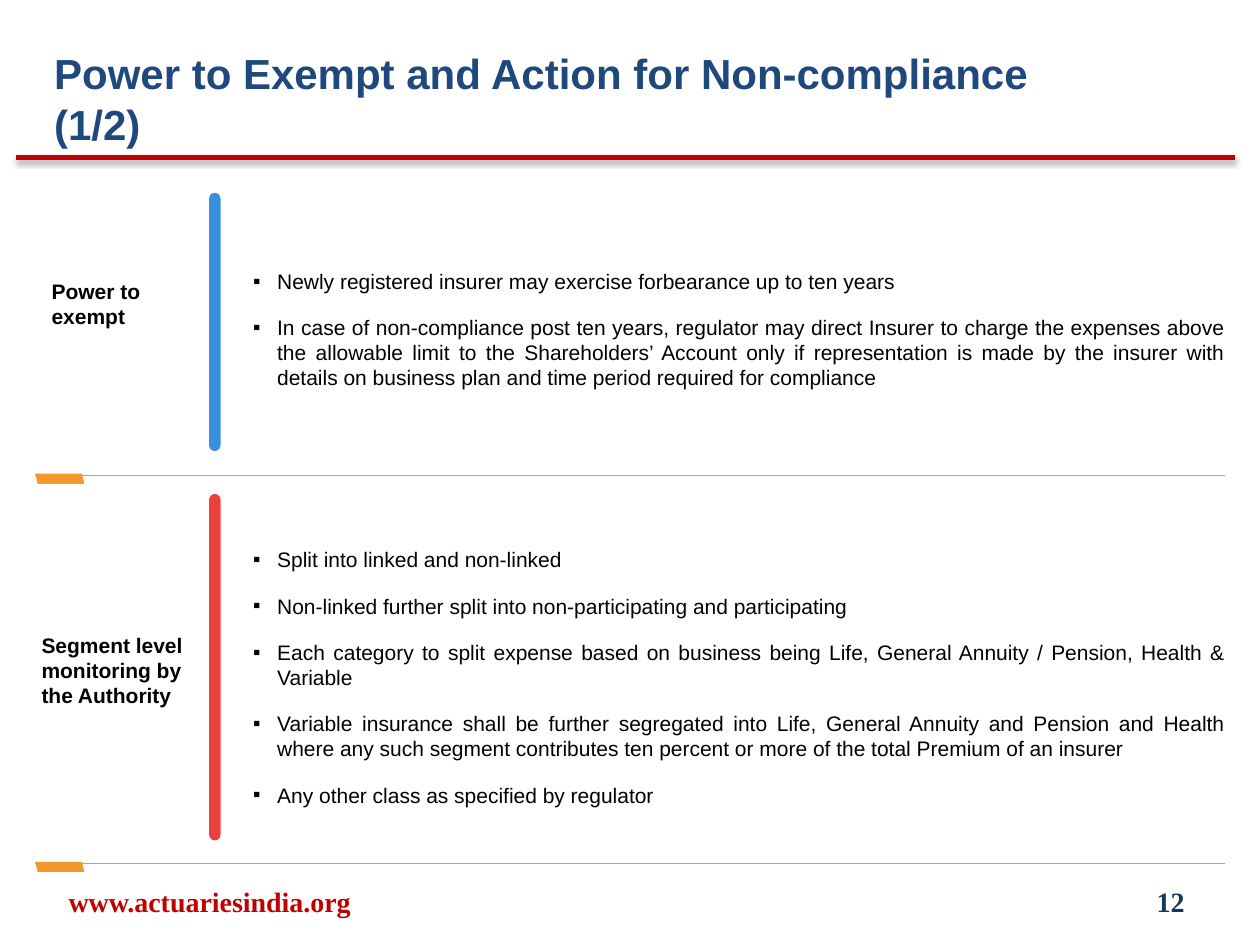
from dataclasses import dataclass

from lxml import etree
from pptx import Presentation
from pptx.dml.color import RGBColor
from pptx.enum.shapes import MSO_CONNECTOR, MSO_SHAPE
from pptx.enum.text import MSO_ANCHOR, MSO_AUTO_SIZE, PP_ALIGN
from pptx.oxml.ns import qn
from pptx.util import Inches, Pt

STRAIGHT = MSO_CONNECTOR.STRAIGHT
PARALLELOGRAM = MSO_SHAPE.PARALLELOGRAM
ROUNDED_BAR = MSO_SHAPE.ROUND_2_SAME_RECTANGLE
TOP, MIDDLE = MSO_ANCHOR.TOP, MSO_ANCHOR.MIDDLE
LEFT, CENTER, RIGHT, JUSTIFY = (
    PP_ALIGN.LEFT, PP_ALIGN.CENTER, PP_ALIGN.RIGHT, PP_ALIGN.JUSTIFY)
NO_AUTOFIT = MSO_AUTO_SIZE.NONE


@dataclass(frozen=True)
class Theme:
    font: str = "Arial"
    footer_font: str = "Times New Roman"
    title_size: int = 24
    body_size: int = 12
    footer_size: int = 16
    title: str = "1F497D"
    text: str = "000000"
    red: str = "C00000"
    number: str = "17375E"
    divider: str = "A6A6A6"
    orange: str = "F1992D"
    blue_bar: str = "3891DE"
    red_bar: str = "EB403D"


SECTIONS = [
    {
        "label": "Power to exempt",
        "label_box": (0.33, 2.17, 1.47, 0.49),
        "bar": (1.53, 2.05),
        "bar_color": Theme.blue_bar,
        "bullet_box": (1.83, 2.04, 8.08, 1.16),
        "bullets": [
            "Newly registered insurer may exercise forbearance up to ten years",
            "In case of non-compliance post ten years, regulator may direct Insurer to charge "
            "the expenses above the allowable limit to the Shareholders’ Account only if "
            "representation is made by the insurer with details on business plan and time "
            "period required for compliance",
        ],
        "divider": 3.77,
    },
    {
        "label": "Segment level monitoring by the Authority",
        "label_box": (0.25, 4.98, 1.47, 0.69),
        "bar": (3.92, 2.75),
        "bar_color": Theme.red_bar,
        "bullet_box": (1.83, 4.25, 8.08, 2.27),
        "bullets": [
            "Split into linked and non-linked",
            "Non-linked further split into non-participating and participating",
            "Each category to split expense based on business being Life, General Annuity / "
            "Pension, Health & Variable",
            "Variable insurance shall be further segregated into Life, General Annuity and "
            "Pension and Health where any such segment contributes ten percent or more of "
            "the total Premium of an insurer",
            "Any other class as specified by regulator",
        ],
        "divider": 6.85,
    },
]


def add_bullet(paragraph):
    properties = paragraph._p.get_or_add_pPr()
    properties.set("marL", str(Inches(0.19)))
    properties.set("indent", str(-Inches(0.19)))
    etree.SubElement(properties, qn("a:buFont"), typeface="Arial")
    etree.SubElement(properties, qn("a:buChar"), char="▪")


def write_text(frame, paragraphs, *, size, color, font, bold=False, align=LEFT,
               anchor=TOP, insets=(0.1, 0.05), bullets=False, gap=0):
    """Fill a text frame; gap is the space in points before and after each paragraph."""
    frame.word_wrap = True
    frame.auto_size = NO_AUTOFIT
    frame.vertical_anchor = anchor
    frame.margin_left = frame.margin_right = Inches(insets[0])
    frame.margin_top = frame.margin_bottom = Inches(insets[1])
    for index, text in enumerate(paragraphs):
        paragraph = frame.add_paragraph() if index else frame.paragraphs[0]
        paragraph.alignment = align
        paragraph.space_before = Pt(gap if index else 0)
        paragraph.space_after = Pt(gap)
        if bullets:
            add_bullet(paragraph)
        run = paragraph.add_run()
        run.text = text
        run.font.name = font
        run.font.size = Pt(size)
        run.font.bold = bold
        run.font.color.rgb = RGBColor.from_string(color)


class SlideBuilder:
    def __init__(self, presentation, theme):
        self.theme = theme
        self.slide = presentation.slides.add_slide(presentation.slide_layouts[5])

    def title(self, text, box):
        title = self.slide.shapes.title
        title.left, title.top, title.width, title.height = map(Inches, box)
        write_text(title.text_frame, [text], size=self.theme.title_size,
                   color=self.theme.title, font=self.theme.font, bold=True)

    def text(self, paragraphs, box, **text_format):
        shape = self.slide.shapes.add_textbox(*map(Inches, box))
        style = {"size": self.theme.body_size, "color": self.theme.text,
                 "font": self.theme.font}
        write_text(shape.text_frame, paragraphs, **(style | text_format))

    def footer(self, text, box, color, align):
        self.text([text], box, size=self.theme.footer_size, color=color,
                  font=self.theme.footer_font, bold=True, align=align, anchor=MIDDLE)

    def line(self, left, right, y, color, width, shadow=False):
        connector = self.slide.shapes.add_connector(
            STRAIGHT, Inches(left), Inches(y), Inches(right), Inches(y))
        connector.line.color.rgb = RGBColor.from_string(color)
        connector.line.width = Pt(width)
        effects = etree.SubElement(connector.element.spPr, qn("a:effectLst"))
        if shadow:
            outer = etree.SubElement(
                effects, qn("a:outerShdw"), blurRad=str(Pt(3.1)), dist=str(Pt(1.6)),
                dir="5400000", rotWithShape="0")
            shade = etree.SubElement(outer, qn("a:srgbClr"), val="000000")
            etree.SubElement(shade, qn("a:alpha"), val="38000")

    def block(self, kind, box, color):
        shape = self.slide.shapes.add_shape(kind, *map(Inches, box))
        shape.shadow.inherit = False
        shape.fill.solid()
        shape.fill.fore_color.rgb = RGBColor.from_string(color)
        shape.line.fill.background()
        return shape

    def divider(self, y):
        self.line(0.28, 9.72, y, self.theme.divider, 0.5)
        tab = self.block(PARALLELOGRAM, (0.28, y - 0.01, 0.39, 0.08), self.theme.orange)
        tab.element.spPr.find(qn("a:xfrm")).set("flipH", "1")

    def section(self, section):
        self.text([section["label"]], section["label_box"], bold=True, insets=(0.08, 0.04))
        top, height = section["bar"]
        bar = self.block(ROUNDED_BAR, (1.66, top, 0.09, height), section["bar_color"])
        bar.adjustments[0] = bar.adjustments[1] = 0.5
        self.text(section["bullets"], section["bullet_box"], align=JUSTIFY,
                  insets=(0.18, 0.09), bullets=True, gap=6)
        self.divider(section["divider"])


def main():
    presentation = Presentation()
    presentation.slide_width, presentation.slide_height = Inches(10), Inches(7.5)
    theme = Theme()
    builder = SlideBuilder(presentation, theme)
    builder.line(0.13, 9.8, 1.25, theme.red, 3, shadow=True)
    builder.title("Power to Exempt and Action for Non-compliance (1/2)",
                  (0.33, 0.33, 8.25, 0.67))
    for section in SECTIONS:
        builder.section(section)
    builder.footer("www.actuariesindia.org", (0.08, 6.95, 3.17, 0.4), theme.red, CENTER)
    builder.footer("12", (7.17, 6.95, 2.33, 0.4), theme.number, RIGHT)
    presentation.save("out.pptx")


if __name__ == "__main__":
    main()
